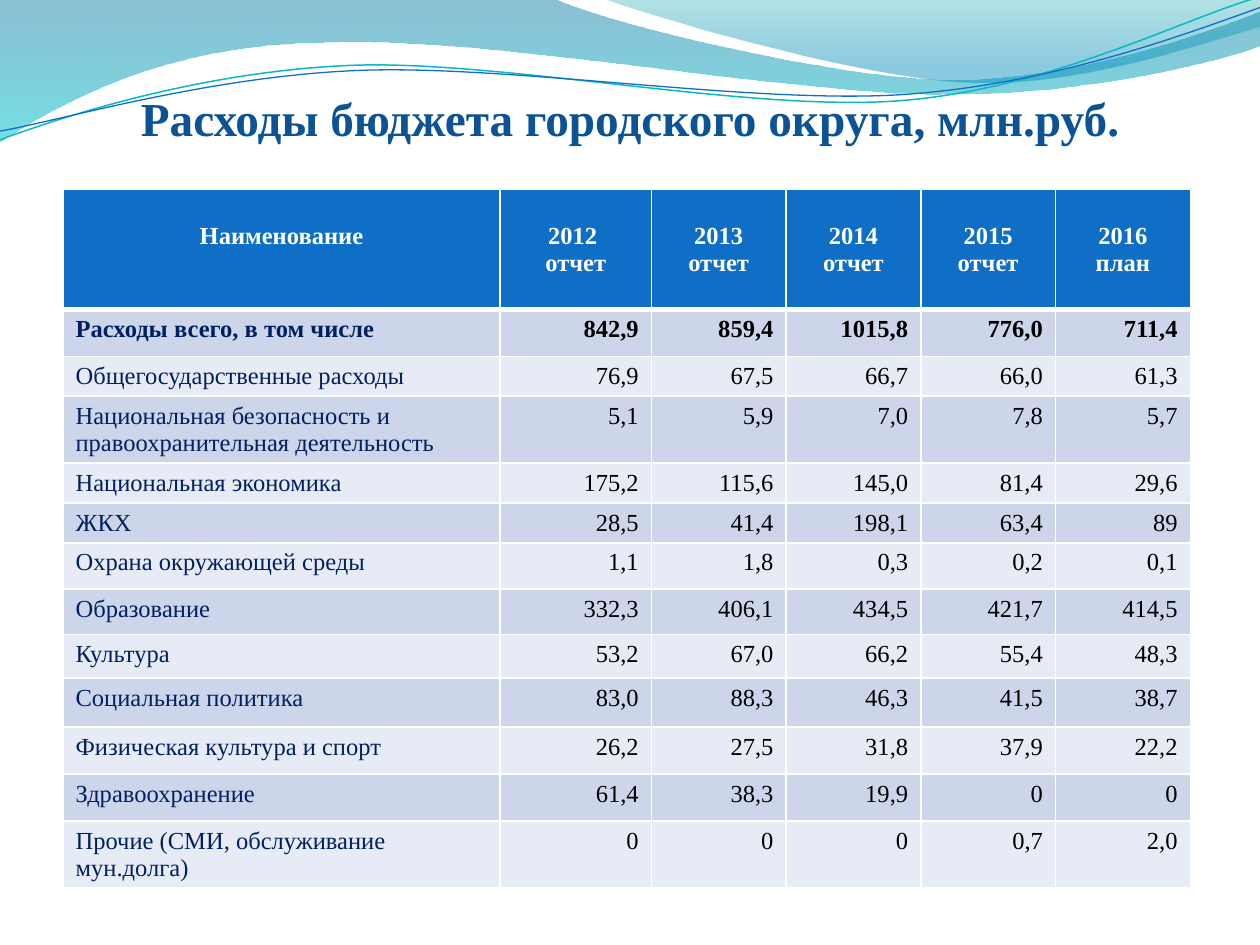
from math import cos, radians, sin

from lxml.etree import SubElement
from pptx import Presentation
from pptx.dml.color import RGBColor
from pptx.enum.text import MSO_ANCHOR, PP_ALIGN
from pptx.oxml import parse_xml
from pptx.oxml.ns import nsdecls, qn
from pptx.util import Pt

FONT = "Times New Roman"
COLORS = {
    "title": "0B5394", "header": "0F6FC6", "white": "FFFFFF", "label": "002060",
    "value": "000000", "odd": "CCD5EA", "even": "E7EBF5",
    "teal_line": "0AB8BF", "blue_line": "0F6FC6",
    "deep_blue": "0074A1", "cyan": "00C6CF", "teal": "00A1A9", "sky": "008BBF",
}
TITLE = "Расходы бюджета городского округа, млн.руб."
HEADER = ["Наименование", "2012 \nотчет", "2013\nотчет", "2014\nотчет", "2015\nотчет", "2016\nплан"]
EXPENSES = [
    ("Расходы всего, в том числе", "842,9", "859,4", "1015,8", "776,0", "711,4"),
    ("Общегосударственные расходы", "76,9", "67,5", "66,7", "66,0", "61,3"),
    ("Национальная безопасность и правоохранительная деятельность", "5,1", "5,9", "7,0", "7,8", "5,7"),
    ("Национальная экономика", "175,2", "115,6", "145,0", "81,4", "29,6"),
    ("ЖКХ", "28,5", "41,4", "198,1", "63,4", "89"),
    ("Охрана окружающей среды", "1,1", "1,8", "0,3", "0,2", "0,1"),
    ("Образование", "332,3", "406,1", "434,5", "421,7", "414,5"),
    ("Культура", "53,2", "67,0", "66,2", "55,4", "48,3"),
    ("Социальная политика", "83,0", "88,3", "46,3", "41,5", "38,7"),
    ("Физическая культура и спорт", "26,2", "27,5", "31,8", "37,9", "22,2"),
    ("Здравоохранение", "61,4", "38,3", "19,9", "0", "0"),
    ("Прочие (СМИ, обслуживание мун.долга)", "0", "0", "0", "0,7", "2,0"),
]
COLUMN_WIDTHS = [249.8, 86.4] + [77] * 4
ROW_HEIGHTS = [68.4, 26.8, 22.8, 38.2, 22.8, 22.8, 26.4, 25.9, 25.1, 28, 26.8, 26.8, 38.4]

# Each step is one point for a straight edge or three points for a curve.
WAVES = [
    {"start": (0, -0.7), "gradient": [(0, "deep_blue", 45), (100, "cyan", 55)], "steps": [
        [(316.8, -0.7)],
        [(342.7, 12.2), (478.1, 45.4), (545.8, 45.4)],
        [(614.2, 45.4), (689.8, 18.7), (720, 6.5)],
        [(720.7, 25.9)],
        [(707.8, 31.7), (626.4, 54.7), (537.1, 54)],
        [(447.8, 54), (275, 20.2), (185, 24.5)],
        [(92.9, 25.2), (33.1, 59.8), (-0.7, 81.4)]]},
    {"start": (344.9, -0.7), "gradient": [(0, "teal", 30), (80, "sky", 45)], "steps": [
        [(366.5, 7.9), (491, 44.6), (553.7, 46.8)],
        [(616.3, 49.7), (691.9, 23), (720, 15.1)],
        [(720, 0)]]},
    {"start": (0, 79.9), "line": ("teal_line", 0.85), "turn": -2.7, "center": (359.3, 41.4), "steps": [
        [(34.6, 67), (113.8, 41), (199.4, 37.4)],
        [(284.4, 33.8), (427, 64.1), (513.4, 57.6)],
        [(599.8, 51.1), (675.4, 10.8), (718.6, -1.4)]]},
    {"start": (0, 74.9), "line": ("blue_line", 0.75), "turn": -2.7, "center": (359.7, 42.5), "steps": [
        [(33.8, 69.1), (118.1, 43.9), (203.8, 40.3)],
        [(290.2, 36.7), (429.8, 59.8), (516.2, 54)],
        [(601.9, 48.2), (677.5, 19.4), (720, 4.3)]]},
]


def rgb(name):
    return RGBColor.from_string(COLORS[name])


def write(frame, text, size=14, color="value", bold=False, align=PP_ALIGN.LEFT):
    for index, line in enumerate(text.split("\n")):
        para = frame.paragraphs[0] if index == 0 else frame.add_paragraph()
        para.alignment = align
        span = para.add_run()
        span.text = line
        span.font.name, span.font.size, span.font.bold = FONT, Pt(size), bold
        span.font.color.rgb = rgb(color)


def turn_back(point, center, angle):
    dx, dy = point[0] - center[0], point[1] - center[1]
    c, s = cos(radians(-angle)), sin(radians(-angle))
    return Pt(center[0] + dx * c - dy * s), Pt(center[1] + dx * s + dy * c)


def fill_gradient(shape, stops):
    gradient = parse_xml(f'<a:gradFill {nsdecls("a")} rotWithShape="1"><a:gsLst/>'
                         '<a:lin ang="5400000" scaled="0"/></a:gradFill>')
    for position, color, opacity in stops:
        stop = SubElement(gradient[0], qn("a:gs"), pos=str(position * 1000))
        tint = SubElement(stop, qn("a:srgbClr"), val=COLORS[color])
        SubElement(tint, qn("a:alpha"), val=str(opacity * 1000))
    shape._element.spPr.find(qn("a:custGeom")).addnext(gradient)


def bend(shape, steps):
    edges = list(shape._element.iter(qn("a:lnTo")))
    for edge, step in zip(edges, steps):
        if len(step) == 3:
            points = "".join(f'<a:pt x="{x - shape.left}" y="{y - shape.top}"/>' for x, y in step)
            curve = parse_xml(f'<a:cubicBezTo {nsdecls("a")}>{points}</a:cubicBezTo>')
            edge.getparent().replace(edge, curve)


def add_wave(page, start, steps, gradient=None, line=None, turn=0, center=(0, 0)):
    steps = [[turn_back(point, center, turn) for point in step] for step in steps]
    builder = page.shapes.build_freeform(*turn_back(start, center, turn))
    builder.add_line_segments([step[-1] for step in steps], close=gradient is not None)
    shape = builder.convert_to_shape()
    bend(shape, steps)
    shape.rotation = turn
    shape.shadow.inherit = False
    if gradient:
        shape.line.fill.background()
        fill_gradient(shape, gradient)
    else:
        shape.fill.background()
        shape.line.color.rgb, shape.line.width = rgb(line[0]), Pt(line[1])


def set_borders(cell, **widths):
    for index, (side, width) in enumerate(widths.items()):
        border = parse_xml(f'<a:ln{side} {nsdecls("a")} w="{Pt(width)}"><a:solidFill>'
                           f'<a:srgbClr val="{COLORS["white"]}"/></a:solidFill></a:ln{side}>')
        cell._tc.get_or_add_tcPr().insert(index, border)


def add_expense_table(page):
    rows = [HEADER, *EXPENSES]
    table = page.shapes.add_table(len(rows), len(HEADER), Pt(36), Pt(108.4),
                                  Pt(sum(COLUMN_WIDTHS)), Pt(sum(ROW_HEIGHTS))).table
    table.horz_banding = False
    for column, width in zip(table.columns, COLUMN_WIDTHS):
        column.width = Pt(width)
    for r, values in enumerate(rows):
        table.rows[r].height = Pt(ROW_HEIGHTS[r])
        for c, text in enumerate(values):
            cell = table.cell(r, c)
            cell.margin_bottom = Pt(1)
            cell.fill.solid()
            cell.fill.fore_color.rgb = rgb("header" if r == 0 else "odd" if r % 2 else "even")
            set_borders(cell, L=1, R=1, T=3 if r == 1 else 1, B=3 if r == 0 else 1)
            if r == 0:
                cell.margin_top = Pt(19)
                write(cell.text_frame, text, color="white", bold=True, align=PP_ALIGN.CENTER)
            else:
                write(cell.text_frame, text, color="value" if c else "label", bold=r == 1,
                      align=PP_ALIGN.RIGHT if c else PP_ALIGN.LEFT)


def main():
    deck = Presentation()
    deck.slide_width, deck.slide_height = Pt(720), Pt(540)
    page = deck.slides.add_slide(deck.slide_layouts[6])
    for wave in WAVES:
        add_wave(page, **wave)
    box = page.shapes.add_textbox(Pt(36), Pt(44.6), Pt(648), Pt(67.7))
    frame = box.text_frame
    frame.word_wrap = True
    frame.margin_left = frame.margin_right = 0
    frame.margin_bottom = Pt(28.6)
    frame.vertical_anchor = MSO_ANCHOR.BOTTOM
    write(frame, TITLE, size=27, color="title", bold=True, align=PP_ALIGN.CENTER)
    add_expense_table(page)
    deck.save("out.pptx")


if __name__ == "__main__":
    main()
